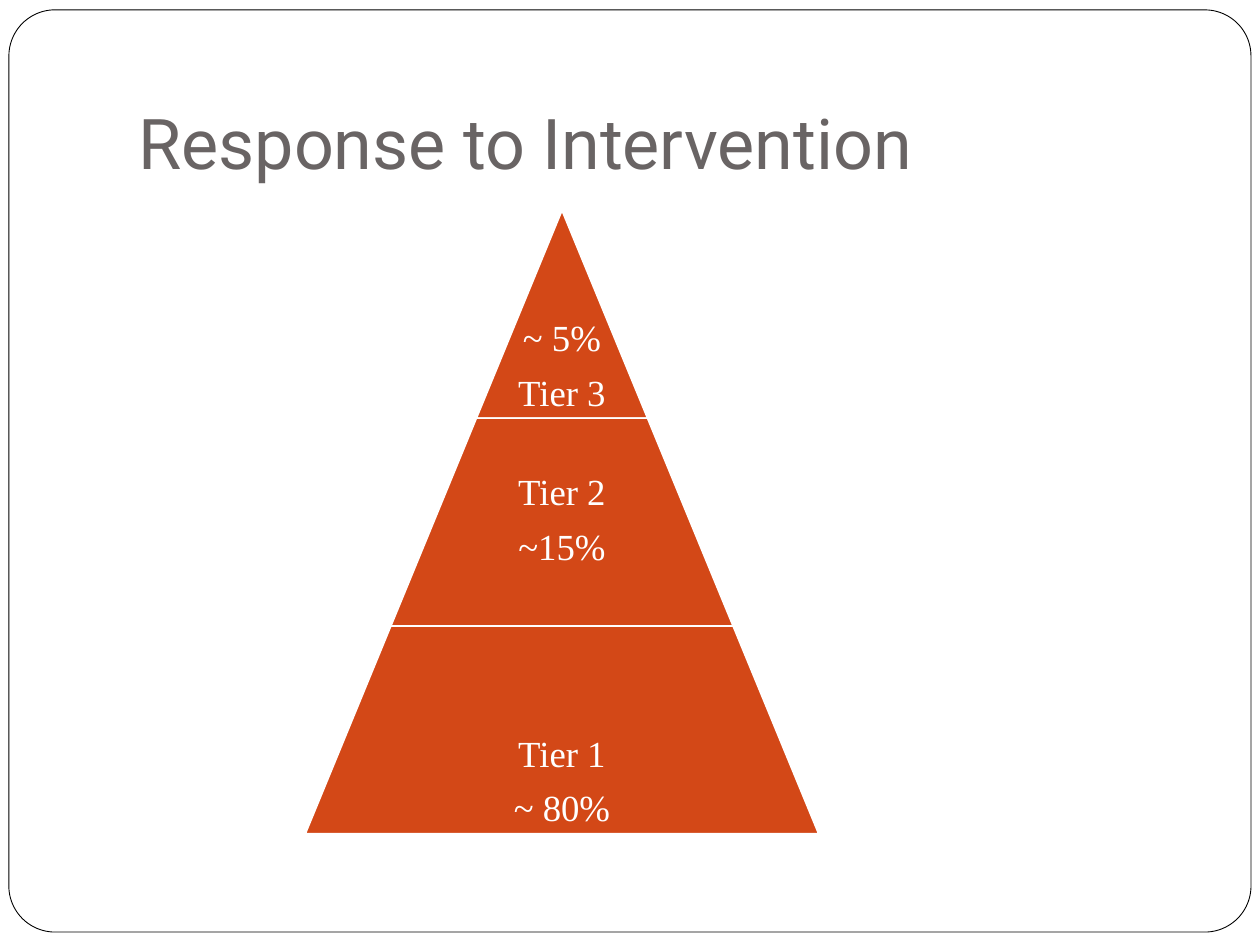
from dataclasses import dataclass

from lxml import etree
from pptx import Presentation
from pptx.dml.color import RGBColor
from pptx.enum.shapes import MSO_SHAPE
from pptx.enum.text import MSO_ANCHOR, MSO_AUTO_SIZE, PP_ALIGN
from pptx.shapes.autoshape import Shape
from pptx.slide import Slide
from pptx.util import Cm, Pt

ROUNDED, TRAPEZOID = MSO_SHAPE.ROUNDED_RECTANGLE, MSO_SHAPE.TRAPEZOID
BOTTOM = MSO_ANCHOR.BOTTOM
LEFT, CENTER = PP_ALIGN.LEFT, PP_ALIGN.CENTER
NO_AUTOFIT = MSO_AUTO_SIZE.NONE
TITLE_ONLY_LAYOUT = 5

# Pyramid geometry, in centimetres
APEX_X, APEX_Y = 11.33, 4.24
TIER_HEIGHT = 4.19
WIDTH_STEP = 3.45


@dataclass(frozen=True)
class Theme:
    paper: RGBColor = RGBColor.from_string("FFFFFF")
    frame: RGBColor = RGBColor.from_string("000000")
    title: RGBColor = RGBColor.from_string("696464")
    tier: RGBColor = RGBColor.from_string("D34817")
    title_font: str = "Roboto"
    tier_font: str = "Times New Roman"
    title_size: Pt = Pt(40)
    tier_size: Pt = Pt(21)


@dataclass(frozen=True)
class Tier:
    lines: tuple[str, str]
    bottom_inset: float = 0.08


THEME = Theme()
TIERS = (
    Tier(("~ 5%", "Tier 3")),
    Tier(("Tier 2", "~15%"), bottom_inset=1.17),
    Tier(("Tier 1", "~ 80%")),
)


def paint(shape: Shape, fill: RGBColor, line: RGBColor, width: float) -> None:
    shape.shadow.inherit = False
    shape.fill.solid()
    shape.fill.fore_color.rgb = fill
    shape.line.color.rgb = line
    shape.line.width = Pt(width)


def draw_frame(page: Slide) -> None:
    """Draw the rounded page border behind everything else."""
    frame = page.shapes.add_shape(ROUNDED, Cm(0.18), Cm(0.2), Cm(25.04), Cm(18.59))
    frame.adjustments[0] = 0.05
    paint(frame, THEME.paper, THEME.frame, 0.5)
    tree: etree.ElementBase = frame.element.getparent()
    tree.insert(2, frame.element)


def write_title(page: Slide, text: str) -> None:
    title = page.shapes.title
    title.left, title.top = Cm(2.54), Cm(0.76)
    title.width, title.height = Cm(21.59), Cm(3.18)
    frame = title.text_frame
    frame.text = text
    frame.auto_size = NO_AUTOFIT
    frame.vertical_anchor = BOTTOM
    frame.margin_bottom = Cm(0.25)
    para = frame.paragraphs[0]
    para.alignment = LEFT
    para.font.name = THEME.title_font
    para.font.size = THEME.title_size
    para.font.color.rgb = THEME.title


def draw_tier(page: Slide, index: int, tier: Tier) -> None:
    """Draw one pyramid level; index 0 is the tip."""
    width = WIDTH_STEP * (index + 1)
    box = page.shapes.add_shape(
        TRAPEZOID,
        Cm(APEX_X - width / 2),
        Cm(APEX_Y + TIER_HEIGHT * index),
        Cm(width),
        Cm(TIER_HEIGHT),
    )
    box.adjustments[0] = WIDTH_STEP / 2 / min(width, TIER_HEIGHT)
    paint(box, THEME.tier, THEME.paper, 1)

    frame = box.text_frame
    frame.text = "\n".join(tier.lines)
    frame.word_wrap = False
    frame.vertical_anchor = BOTTOM
    frame.margin_left = frame.margin_right = frame.margin_top = Cm(0.08)
    frame.margin_bottom = Cm(tier.bottom_inset)
    for para in frame.paragraphs:
        para.alignment = CENTER
        para.line_spacing = 0.9
        para.space_after = Pt(8.4)
        para.font.name = THEME.tier_font
        para.font.size = THEME.tier_size
        para.font.color.rgb = THEME.paper


def main() -> None:
    deck = Presentation()
    deck.slide_width, deck.slide_height = Cm(25.4), Cm(19.05)
    page = deck.slides.add_slide(deck.slide_layouts[TITLE_ONLY_LAYOUT])
    draw_frame(page)
    write_title(page, "Response to Intervention")
    for index, tier in enumerate(TIERS):
        draw_tier(page, index, tier)
    deck.save("out.pptx")


if __name__ == "__main__":
    main()
